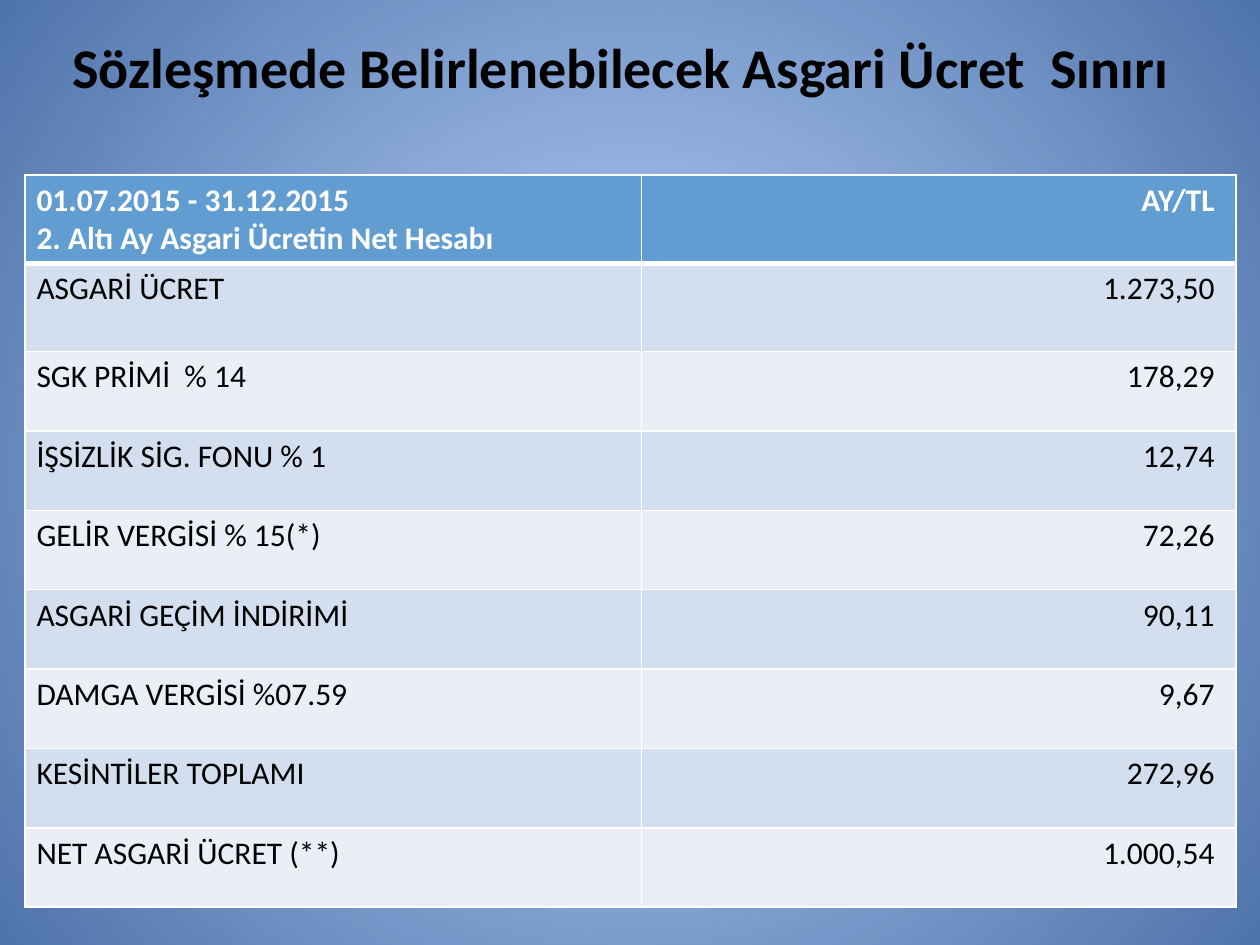
from lxml.etree import SubElement
from pptx import Presentation
from pptx.dml.color import RGBColor
from pptx.enum.text import MSO_ANCHOR, PP_ALIGN
from pptx.oxml import parse_xml
from pptx.oxml.ns import nsdecls, qn
from pptx.util import Inches, Pt

FONT = "Calibri"
COLORS = {
    "glow": "BCD6FF",
    "edge": "4F74AA",
    "text": "000000",
    "white": "FFFFFF",
    "header": "629DD1",
    "odd_row": "D3DFEE",
    "even_row": "EAEFF7",
}
TITLE = "Sözleşmede Belirlenebilecek Asgari Ücret  Sınırı"
ROWS = [
    ("01.07.2015 - 31.12.2015\v2. Altı Ay Asgari Ücretin Net Hesabı", "AY/TL"),
    ("ASGARİ ÜCRET", "1.273,50"),
    ("SGK PRİMİ  % 14", "178,29"),
    ("İŞSİZLİK SİG. FONU % 1", "12,74"),
    ("GELİR VERGİSİ % 15(*)", "72,26"),
    ("ASGARİ GEÇİM İNDİRİMİ", "90,11"),
    ("DAMGA VERGİSİ %07.59", "9,67"),
    ("KESİNTİLER TOPLAMI", "272,96"),
    ("NET ASGARİ ÜCRET (**)", "1.000,54"),
]
COLUMN_WIDTHS = (4.89, 4.72)
ROW_HEIGHTS = [0.7, 0.7] + [0.63] * 7


def set_radial_background(slide):
    background = parse_xml(
        f'<p:bg {nsdecls("p", "a")}><p:bgPr><a:gradFill rotWithShape="1"><a:gsLst>'
        f'<a:gs pos="0"><a:srgbClr val="{COLORS["glow"]}"/></a:gs>'
        f'<a:gs pos="100000"><a:srgbClr val="{COLORS["edge"]}"/></a:gs></a:gsLst>'
        '<a:path path="circle"><a:fillToRect l="50000" t="50000" r="50000" b="50000"/></a:path>'
        "</a:gradFill><a:effectLst/></p:bgPr></p:bg>"
    )
    slide.element.cSld.insert(0, background)


def format_paragraph(paragraph, size, color, bold, alignment):
    paragraph.alignment = alignment
    font = paragraph.font
    font.name, font.size, font.bold = FONT, Pt(size), bold
    font.color.rgb = RGBColor.from_string(COLORS[color])


def add_title(slide):
    box = slide.shapes.add_textbox(Inches(0.43), Inches(0.13), Inches(9), Inches(0.79))
    frame = box.text_frame
    frame.word_wrap = True
    frame.vertical_anchor = MSO_ANCHOR.MIDDLE
    frame.text = TITLE
    format_paragraph(frame.paragraphs[0], 32, "text", True, PP_ALIGN.CENTER)


def set_border(cell, side, width):
    line = SubElement(cell._tc.get_or_add_tcPr(), qn(f"a:ln{side}"), w=str(Pt(width)))
    fill = SubElement(line, qn("a:solidFill"))
    SubElement(fill, qn("a:srgbClr"), val=COLORS["white"])


def format_cell(cell, row, column):
    is_header = row == 0
    for side in "LRTB":
        thick = (row == 0 and side == "B") or (row == 1 and side == "T")
        set_border(cell, side, 3 if thick else 1)
    fill_name = "header" if is_header else "odd_row" if row % 2 else "even_row"
    cell.fill.solid()
    cell.fill.fore_color.rgb = RGBColor.from_string(COLORS[fill_name])
    cell.margin_left = Inches(0.09)
    cell.margin_right = Inches(0.17 if column else 0.09)
    cell.margin_top = cell.margin_bottom = Inches(0.05)
    alignment = PP_ALIGN.RIGHT if column else PP_ALIGN.LEFT
    color = "white" if is_header else "text"
    format_paragraph(cell.text_frame.paragraphs[0], 18, color, is_header, alignment)


def add_wage_table(slide):
    table = slide.shapes.add_table(
        len(ROWS), len(COLUMN_WIDTHS), Inches(0.2), Inches(1.39),
        Inches(sum(COLUMN_WIDTHS)), Inches(sum(ROW_HEIGHTS)),
    ).table
    for column, width in zip(table.columns, COLUMN_WIDTHS):
        column.width = Inches(width)
    for row, (texts, height) in enumerate(zip(ROWS, ROW_HEIGHTS)):
        table.rows[row].height = Inches(height)
        for column, text in enumerate(texts):
            cell = table.cell(row, column)
            cell.text = text
            format_cell(cell, row, column)


def main():
    presentation = Presentation()
    presentation.slide_width = Inches(10)
    presentation.slide_height = Inches(7.5)
    slide = presentation.slides.add_slide(presentation.slide_layouts[6])
    set_radial_background(slide)
    add_title(slide)
    add_wage_table(slide)
    presentation.save("out.pptx")


if __name__ == "__main__":
    main()
